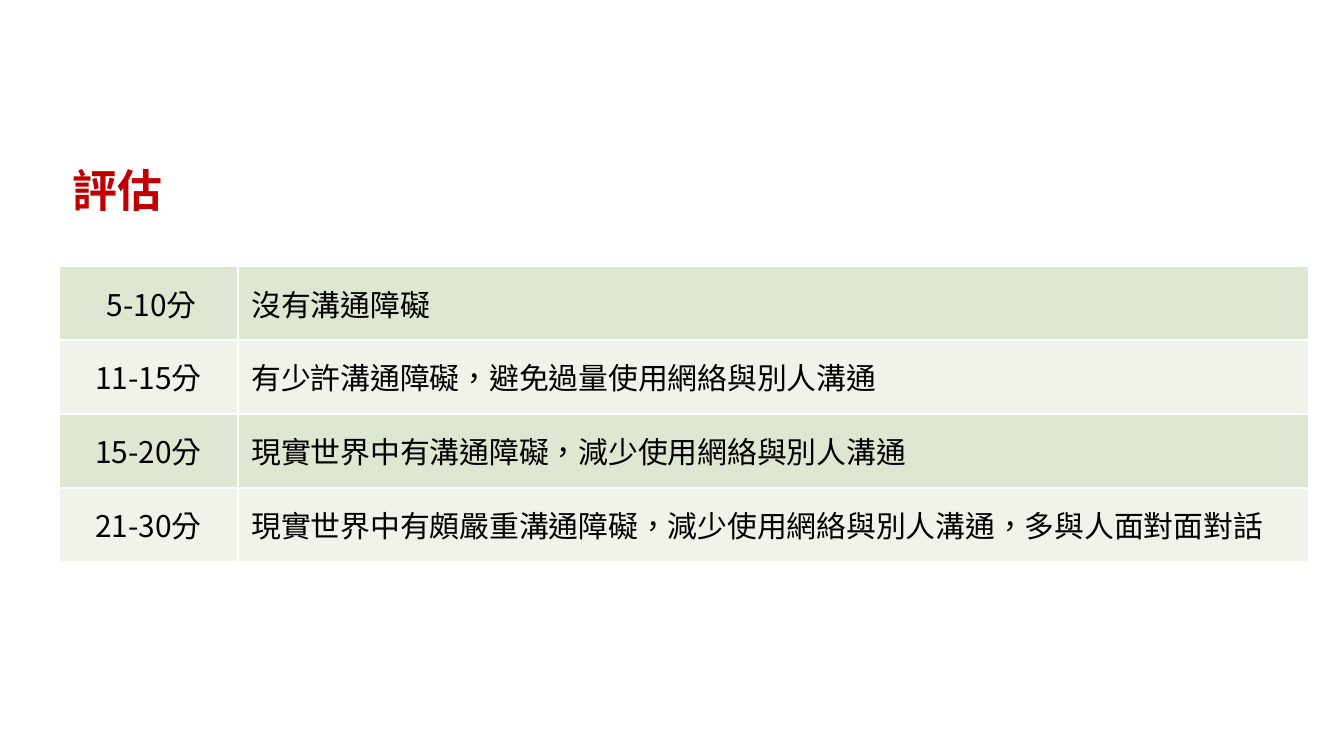
from lxml import etree
from pptx import Presentation, util as u
from pptx.dml.color import RGBColor
from pptx.enum import text
from pptx.oxml.ns import qn

TITLE = "評估"
ROWS = [
    (" 5-10分", "沒有溝通障礙"),
    ("11-15分", "有少許溝通障礙，避免過量使用網絡與別人溝通"),
    ("15-20分", "現實世界中有溝通障礙，減少使用網絡與別人溝通"),
    ("21-30分", "現實世界中有頗嚴重溝通障礙，減少使用網絡與別人溝通，多與人面對面對話"),
]

FONT = "Noto Sans CJK SC"
RED = RGBColor(0xC0, 0x00, 0x00)
BLACK = RGBColor(0, 0, 0)
WHITE = RGBColor(0xFF, 0xFF, 0xFF)
BANDS = [RGBColor(0xDE, 0xE7, 0xD1), RGBColor(0xEF, 0xF3, 0xEA)]

WIDE = u.Inches(10)
HIGH = WIDE * 9 // 16
LEFT = 0.44
COLS = [1.33, 7.97]
ROW = 0.55
ALIGN = [text.PP_ALIGN.CENTER, text.PP_ALIGN.LEFT]


def style(para, size, color, align, bold=False):
    para.alignment = align
    font = para.font
    font.size, font.bold, font.name = u.Pt(size), bold, FONT
    font.color.rgb = color
    props = para._p.pPr.find(qn("a:defRPr"))
    props.set("lang", "zh-TW")
    props.find(qn("a:latin")).addnext(
        etree.Element(qn("a:ea"), typeface=FONT))
    for run in para.runs:
        run._r.get_or_add_rPr().set("lang", "zh-TW")


def edge(cell):
    """Give the cell a thin white line on all four sides."""
    props = cell._tc.get_or_add_tcPr()
    for i, side in enumerate("LRTB"):
        line = etree.Element(qn(f"a:ln{side}"), w=str(u.Pt(1)))
        fill = etree.SubElement(line, qn("a:solidFill"))
        etree.SubElement(fill, qn("a:srgbClr"), val=str(WHITE))
        props.insert(i, line)


def add_title(slide):
    title = slide.shapes.title
    title.left, title.top = u.Inches(LEFT), u.Inches(1.16)
    title.width, title.height = u.Inches(8.34), u.Inches(0.5)
    frame = title.text_frame
    frame.text = TITLE
    frame.vertical_anchor = text.MSO_ANCHOR.MIDDLE
    frame.auto_size = text.MSO_AUTO_SIZE.NONE
    style(frame.paragraphs[0], 24, RED, text.PP_ALIGN.LEFT, bold=True)


def add_scores(slide):
    table = slide.shapes.add_table(
        len(ROWS), len(COLS), u.Inches(LEFT), u.Inches(1.98),
        u.Inches(sum(COLS)), u.Inches(ROW * len(ROWS))).table
    table.first_row = False
    for col, width in zip(table.columns, COLS):
        col.width = u.Inches(width)
    for r, row in enumerate(ROWS):
        for c, words in enumerate(row):
            cell = table.cell(r, c)
            cell.text = words
            cell.vertical_anchor = text.MSO_ANCHOR.MIDDLE
            cell.fill.solid()
            cell.fill.fore_color.rgb = BANDS[r % 2]
            edge(cell)
            style(cell.text_frame.paragraphs[0], 16, BLACK, ALIGN[c])


def main():
    deck = Presentation()
    deck.slide_width, deck.slide_height = WIDE, HIGH
    slide = deck.slides.add_slide(deck.slide_layouts.get_by_name("Title Only"))
    add_title(slide)
    add_scores(slide)
    deck.save("out.pptx")


if __name__ == "__main__":
    main()
